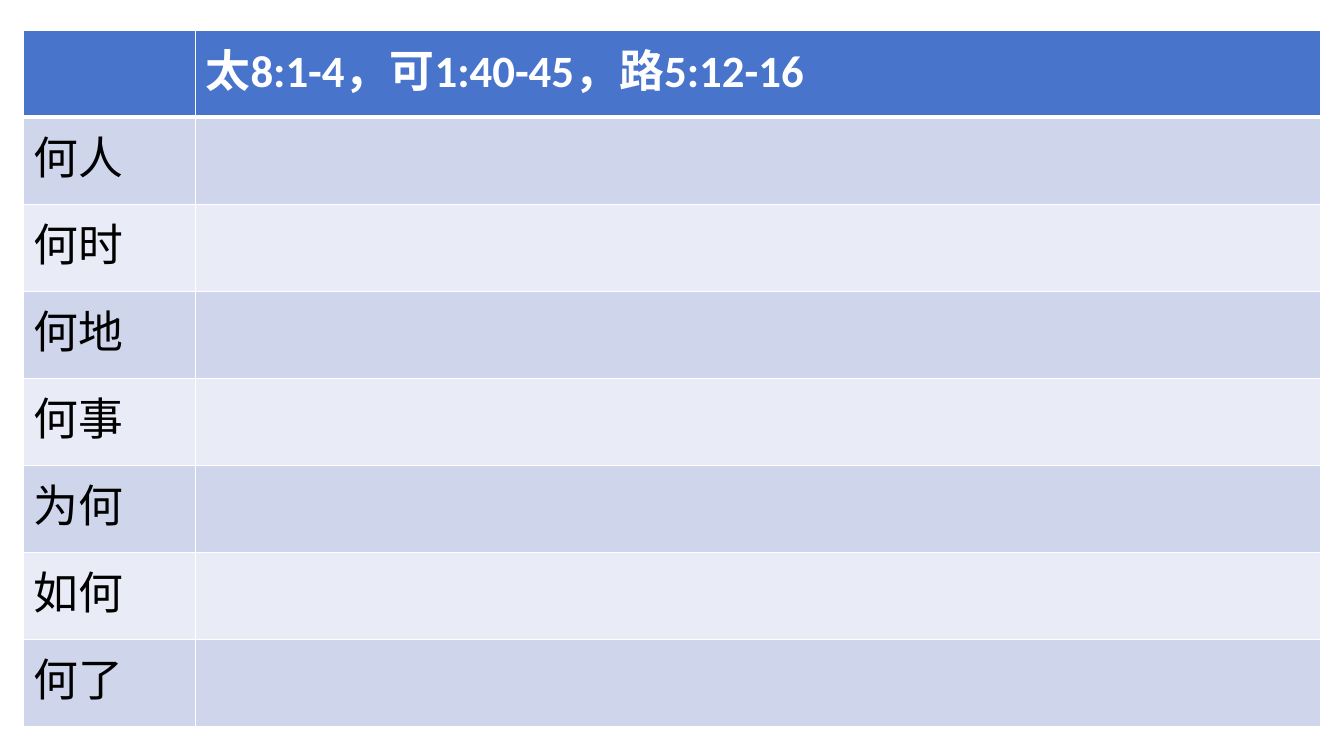
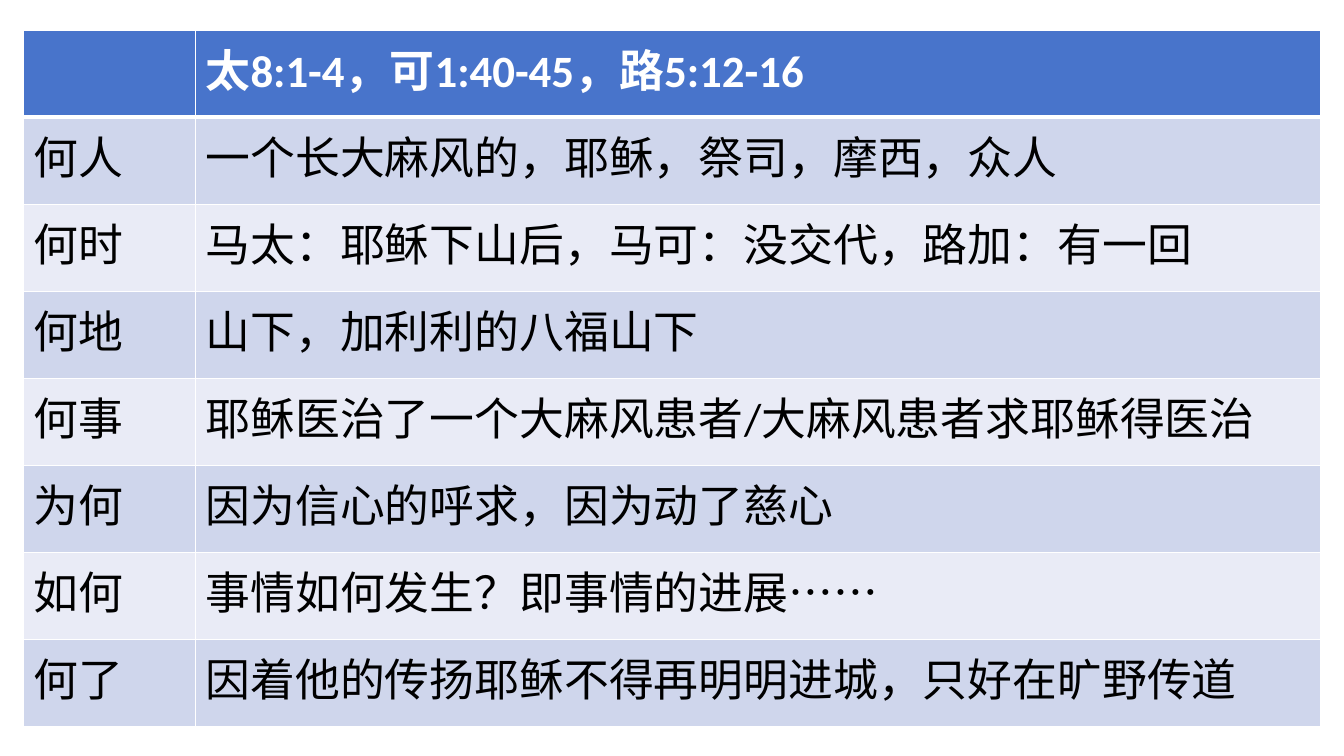
from lxml import etree
from pptx import Presentation
from pptx.dml.color import RGBColor
from pptx.enum.lang import MSO_LANGUAGE_ID
from pptx.oxml.ns import qn
from pptx.util import Inches, Pt

CHINESE = MSO_LANGUAGE_ID.SIMPLIFIED_CHINESE
BLANK_LAYOUT = 6
FONT = "Calibri"
COLORS = {
    "header": "4874CB",
    "band_dark": "CFD6EC",
    "band_light": "E9EBF6",
    "white": "FFFFFF",
    "black": "000000",
}
COLUMN_WIDTHS = (1.71, 11.16)
PASSAGES = "太8:1-4，可1:40-45，路5:12-16"
QUESTIONS = ("何人", "何时", "何地", "何事", "为何", "如何", "何了")
ANSWERS = (
    "一个长大麻风的，耶稣，祭司，摩西，众人",
    "马太：耶稣下山后，马可：没交代，路加：有一回",
    "山下，加利利的八福山下",
    "耶稣医治了一个大麻风患者/大麻风患者求耶稣得医治",
    "因为信心的呼求，因为动了慈心",
    "事情如何发生？即事情的进展……",
    "因着他的传扬耶稣不得再明明进城，只好在旷野传道",
)


def rgb(name):
    return RGBColor.from_string(COLORS[name])


def add_borders(cell, top=1, bottom=1):
    properties = cell._tc.get_or_add_tcPr()
    for side, width in (("L", 1), ("R", 1), ("T", top), ("B", bottom)):
        line = etree.SubElement(properties, qn(f"a:ln{side}"), w=str(Pt(width)))
        fill = etree.SubElement(line, qn("a:solidFill"))
        etree.SubElement(fill, qn("a:srgbClr"), val=COLORS["white"])


def write_text(cell, text, size=32, color="black", bold=False):
    para = cell.text_frame.paragraphs[0]
    para.font.size = Pt(size)
    if not text:
        return
    span = para.add_run()
    span.text = text
    span.font.name = FONT
    span.font.size = Pt(size)
    span.font.bold = bold
    span.font.color.rgb = rgb(color)
    span.font.language_id = CHINESE


def row_fill(row):
    if row == 0:
        return "header"
    return "band_dark" if row % 2 else "band_light"


def add_question_table(page, answers):
    rows = [("", PASSAGES), *zip(QUESTIONS, answers)]
    frame = page.shapes.add_table(
        len(rows), len(COLUMN_WIDTHS),
        Inches(0.23), Inches(0.3), Inches(sum(COLUMN_WIDTHS)), Inches(6.91),
    )
    table = frame.table
    for column, width in zip(table.columns, COLUMN_WIDTHS):
        column.width = Inches(width)
    for row, texts in enumerate(rows):
        is_header = row == 0
        for column, text in enumerate(texts):
            cell = table.cell(row, column)
            add_borders(cell, top=3 if row == 1 else 1, bottom=3 if is_header else 1)
            cell.fill.solid()
            cell.fill.fore_color.rgb = rgb(row_fill(row))
            write_text(cell, text, color="white" if is_header else "black", bold=is_header)


def main():
    deck = Presentation()
    deck.slide_width = Inches(13.33)
    deck.slide_height = Inches(7.5)
    for answers in ([""] * len(QUESTIONS), ANSWERS):
        page = deck.slides.add_slide(deck.slide_layouts[BLANK_LAYOUT])
        add_question_table(page, answers)
    deck.save("out.pptx")


if __name__ == "__main__":
    main()
